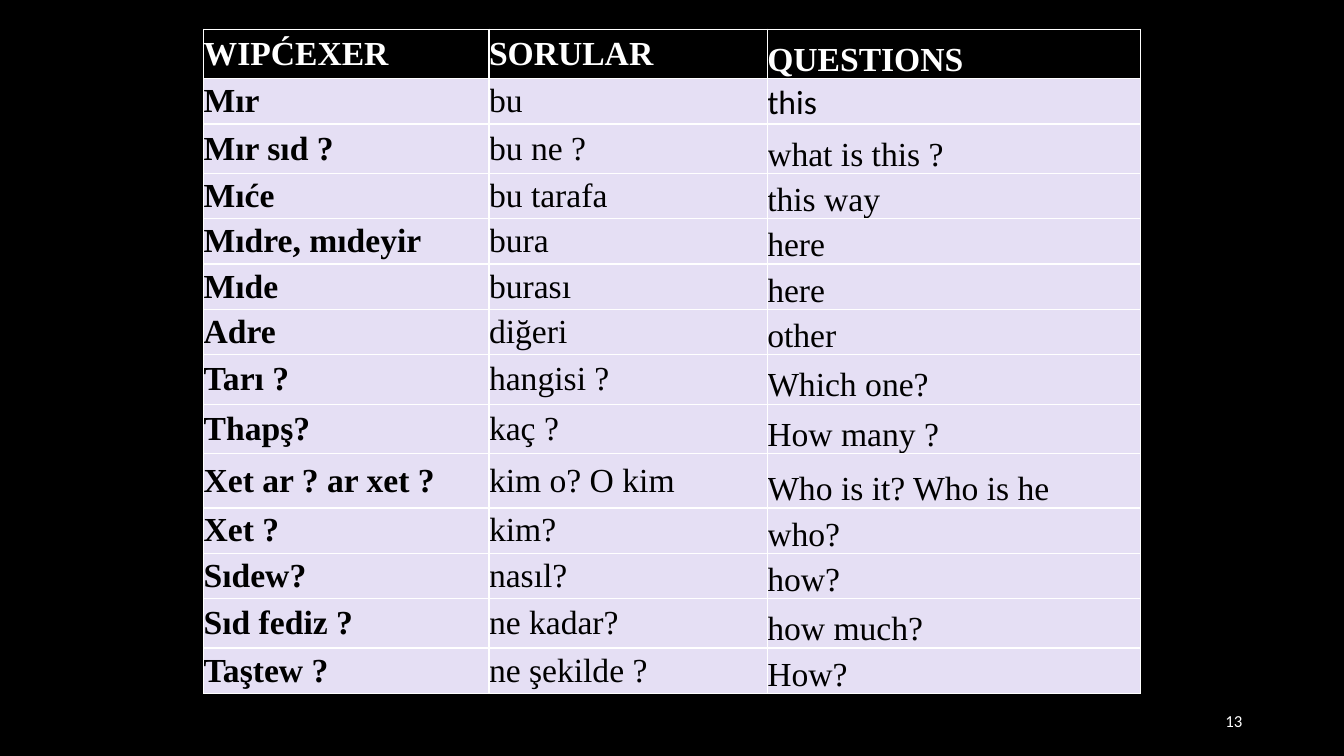
from lxml import etree
from pptx import Presentation
from pptx import util as u
from pptx.dml import color
from pptx.enum import text
from pptx.oxml import ns

WHITE, BLACK, LILAC = "FFFFFF", "000000", "E5DFF4"
SERIF, SANS = "Times New Roman", "Calibri"
COLUMN_WIDTHS = (2.83, 2.76, 3.7)
NORMAL, TALL, TALLEST = 0.45, 0.49, 0.54

# Row height, then the word in each language
QUESTION_WORDS = [
    (TALL, "WIPĆEXER", "SORULAR", "QUESTIONS"),
    (NORMAL, "Mır", "bu", "this"),
    (TALL, "Mır sıd ?", "bu ne ?", "what is this ?"),
    (NORMAL, "Mıće", "bu tarafa", "this way"),
    (NORMAL, "Mıdre, mıdeyir", "bura", "here"),
    (NORMAL, "Mıde", "burası", "here"),
    (NORMAL, "Adre", "diğeri", "other"),
    (TALL, "Tarı ?", "hangisi ?", "Which one?"),
    (TALL, "Thapş?", "kaç ?", "How many ?"),
    (TALLEST, "Xet ar ? ar xet ?", "kim o? O kim", "Who is it? Who is he"),
    (NORMAL, "Xet ?", "kim?", "who?"),
    (NORMAL, "Sıdew?", "nasıl?", "how?"),
    (TALL, "Sıd fediz ?", "ne kadar?", "how much?"),
    (NORMAL, "Taştew ?", "ne şekilde ?", "How?"),
]


def paint(target, hex_color):
    """Give a fill a solid colour."""
    target.solid()
    target.fore_color.rgb = color.RGBColor.from_string(hex_color)


def apply_format(target, values):
    for name, value in values.items():
        setattr(target, name, value)


def write(paragraph, words, hex_color, **font_format):
    run = paragraph.add_run()
    run.text = words
    apply_format(run.font, font_format)
    paint(run.font.fill, hex_color)


def add_borders(cell, hex_color, points):
    properties = cell._tc.get_or_add_tcPr()
    for position, side in enumerate(("lnL", "lnR", "lnT", "lnB")):
        line = etree.Element(ns.qn(f"a:{side}"), w=str(u.Pt(points)))
        fill = etree.SubElement(line, ns.qn("a:solidFill"))
        etree.SubElement(fill, ns.qn("a:srgbClr"), val=hex_color)
        properties.insert(position, line)


def add_word_table(slide, left, top):
    width = sum(COLUMN_WIDTHS)
    height = sum(row[0] for row in QUESTION_WORDS)
    table = slide.shapes.add_table(
        len(QUESTION_WORDS), len(COLUMN_WIDTHS),
        *map(u.Inches, (left, top, width, height))).table
    for column, column_width in zip(table.columns, COLUMN_WIDTHS):
        column.width = u.Inches(column_width)

    for r, (row_height, *words) in enumerate(QUESTION_WORDS):
        table.rows[r].height = u.Inches(row_height)
        is_header = r == 0
        for c, word in enumerate(words):
            cell = table.cell(r, c)
            is_english = c == 2
            anchor = text.MSO_ANCHOR.BOTTOM if is_english else text.MSO_ANCHOR.MIDDLE
            apply_format(cell, dict(
                margin_left=0, margin_top=0, margin_right=0, margin_bottom=0,
                vertical_anchor=anchor))
            paint(cell.fill, BLACK if is_header else LILAC)
            add_borders(cell, WHITE, 1)
            write(cell.text_frame.paragraphs[0], word,
                  WHITE if is_header else BLACK,
                  name=SANS if word == "this" else SERIF,
                  size=u.Pt(24), bold=is_header or c == 0)


def add_page_number(slide, left, top, width, height):
    frame = slide.shapes.add_textbox(
        *map(u.Inches, (left, top, width, height))).text_frame
    apply_format(frame, dict(
        word_wrap=True, vertical_anchor=text.MSO_ANCHOR.MIDDLE))
    paragraph = frame.paragraphs[0]
    paragraph.alignment = text.PP_ALIGN.RIGHT
    write(paragraph, "13", WHITE, name=SANS, size=u.Pt(12))


def main():
    deck = Presentation()
    apply_format(deck, dict(slide_width=u.Inches(13.33), slide_height=u.Inches(7.5)))
    slide = deck.slides.add_slide(deck.slide_layouts[6])
    paint(slide.background.fill, BLACK)
    add_word_table(slide, 2.02, 0.29)
    add_page_number(slide, 9.42, 6.95, 3, 0.4)
    deck.save("out.pptx")


if __name__ == "__main__":
    main()
